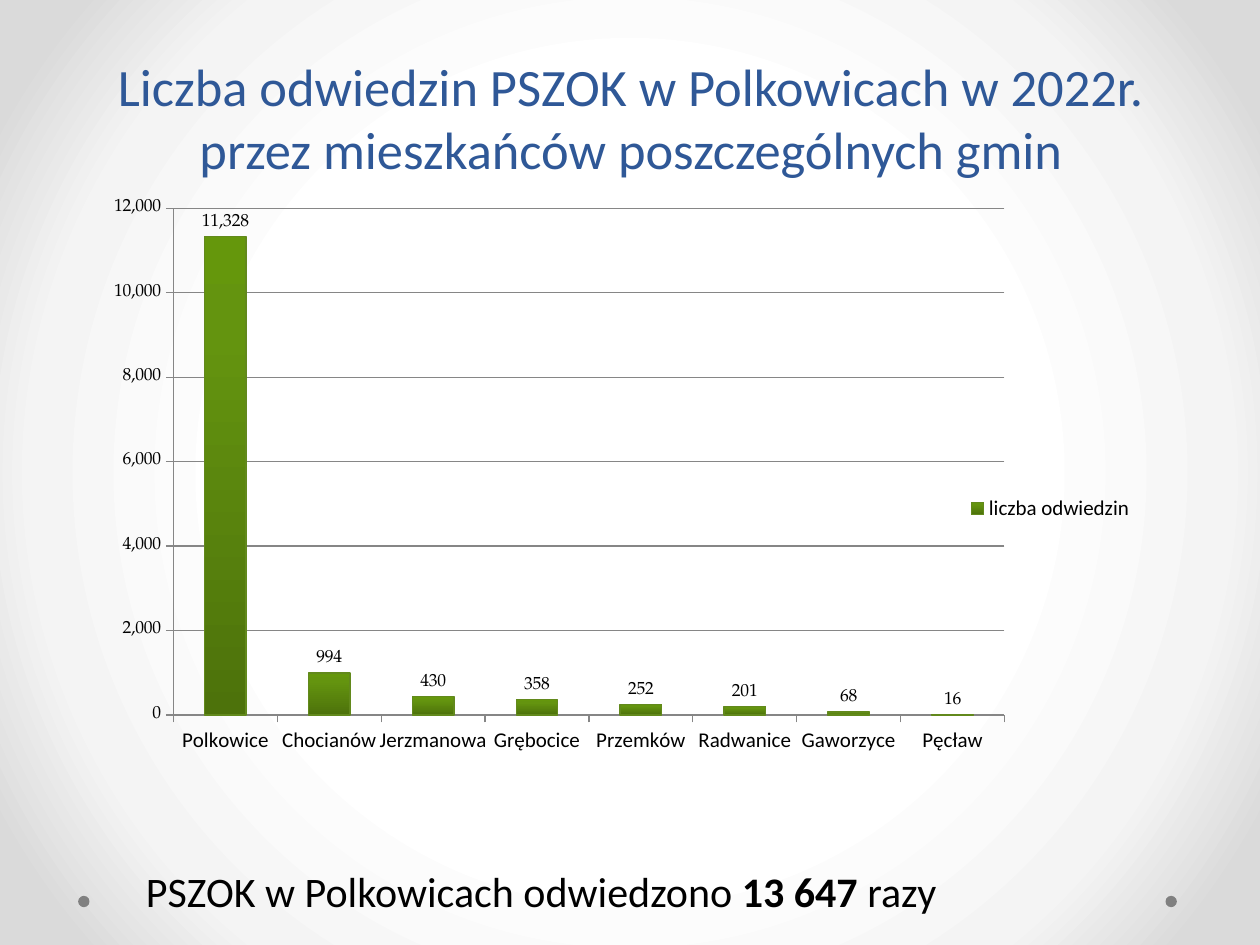
from lxml import etree
from pptx import Presentation
from pptx.chart.data import CategoryChartData
from pptx.dml.color import RGBColor
from pptx.enum import chart as ch, shapes, text
from pptx.oxml import parse_xml
from pptx.oxml.ns import nsdecls, qn
from pptx.util import Inches, Pt

BLUE = RGBColor(0x2F, 0x58, 0x97)
BLACK = RGBColor(0, 0, 0)
GRAY = RGBColor(0x80, 0x80, 0x80)
RULE = RGBColor(0x86, 0x86, 0x86)
EDGE = RGBColor(0x62, 0x89, 0x1C)
GLOW = [(50, RGBColor(0xFF, 0xFF, 0xFF)), (76, RGBColor(0xF4, 0xF4, 0xF4)),
        (92, RGBColor(0xDA, 0xDA, 0xDA))]
GREEN = [(0, RGBColor(0x4D, 0x72, 0x0B)), (80, RGBColor(0x64, 0x94, 0x0F)),
         (100, RGBColor(0x65, 0x97, 0x0C))]
ROUND = ('<a:path path="circle"><a:fillToRect l="50000" t="50000" '
         'r="50000" b="50000"/></a:path>')
RISE = '<a:lin ang="16200000" scaled="0"/>'

TITLE = ["Liczba odwiedzin PSZOK w Polkowicach w 2022r.\v"
         "przez mieszkańców poszczególnych gmin"]
TOTAL = ["PSZOK w Polkowicach odwiedzono ", "13 647 ", "razy"]
SERIES = "liczba odwiedzin"
VISITS = {"Polkowice": 11328, "Chocianów": 994, "Jerzmanowa": 430,
          "Grębocice": 358, "Przemków": 252, "Radwanice": 201,
          "Gaworzyce": 68, "Pęcław": 16}
PLOT = {"x": 0.075, "y": 0.034, "w": 0.79, "h": 0.787}
DOTS = [0.62, 9.25]
LABEL = {"name": "Calibri", "size": Pt(12)}


def style(item, **vals):
    for key, val in vals.items():
        setattr(item, key, val)


def shade(fill, root, stops, tail):
    fill.gradient()
    old = next(root.iter(qn("a:gradFill")))
    marks = "".join(f'<a:gs pos="{pos * 1000}"><a:srgbClr val="{tint}"/></a:gs>'
                    for pos, tint in stops)
    new = parse_xml(f'<a:gradFill {nsdecls("a")} rotWithShape="1">'
                    f'<a:gsLst>{marks}</a:gsLst>{tail}</a:gradFill>')
    old.getparent().replace(old, new)


def write(slide, box, parts, size, tint, align, anchor):
    frame = slide.shapes.add_textbox(*map(Inches, box)).text_frame
    style(frame, word_wrap=True, vertical_anchor=anchor)
    para = frame.paragraphs[0]
    para.alignment = align
    for part in parts:
        start = len(para.runs)
        for i, line in enumerate(part.split("\v")):
            if i:
                para.add_line_break()
            para.add_run().text = line
        for run in para.runs[start:]:
            style(run.font, name="Calibri", size=Pt(size),
                  bold=part == "13 647 ")
            run.font.color.rgb = tint


def place(area):
    for old in area.findall(qn("c:layout")):
        area.remove(old)
    layout = etree.Element(qn("c:layout"))
    inner = etree.SubElement(layout, qn("c:manualLayout"))
    rows = [("layoutTarget", "inner"), ("xMode", "edge"), ("yMode", "edge")]
    for key, val in rows + list(PLOT.items()):
        etree.SubElement(inner, qn(f"c:{key}")).set("val", str(val))
    area.insert(0, layout)


def draw(slide):
    data = CategoryChartData(number_format="#,##0")
    data.categories = list(VISITS)
    data.add_series(SERIES, list(VISITS.values()))
    box = map(Inches, (0.75, 1.48, 8.35, 5.11))
    chart = slide.shapes.add_chart(ch.XL_CHART_TYPE.COLUMN_CLUSTERED,
                                   *box, data).chart
    style(chart, has_title=False, has_legend=True)
    style(chart.font, name="TeX Gyre Pagella", size=Pt(10))
    chart.font.color.rgb = BLACK
    style(chart.legend, position=ch.XL_LEGEND_POSITION.RIGHT,
          include_in_layout=False)
    cats, vals = chart.category_axis, chart.value_axis
    for font in (chart.legend.font, cats.tick_labels.font):
        style(font, **LABEL)
    style(vals, minimum_scale=0, maximum_scale=12000, major_unit=2000,
          has_major_gridlines=True)
    style(vals.tick_labels, number_format="#,##0",
          number_format_is_linked=False)
    for axis in (cats, vals):
        axis.major_tick_mark = ch.XL_TICK_MARK.OUTSIDE
    for part in (cats, vals, vals.major_gridlines):
        part.format.line.color.rgb = RULE
        part.format.line.width = Pt(0.75)
    plot = chart.plots[0]
    style(plot, gap_width=150, vary_by_categories=False, has_data_labels=True)
    style(plot.data_labels, show_value=True, number_format="#,##0",
          number_format_is_linked=False,
          position=ch.XL_LABEL_POSITION.OUTSIDE_END)
    bars = plot.series[0]
    bars.invert_if_negative = False
    shade(bars.format.fill, bars._element, GREEN, RISE)
    bars.format.line.color.rgb = EDGE
    bars.format.line.width = Pt(0.75)
    place(next(chart._chartSpace.iter(qn("c:plotArea"))))


def main():
    deck = Presentation()
    style(deck, slide_width=Inches(10), slide_height=Inches(7.5))
    slide = deck.slides.add_slide(deck.slide_layouts[6])
    shade(slide.background.fill, slide.element, GLOW, ROUND)
    for left in DOTS:
        dot = slide.shapes.add_shape(shapes.MSO_SHAPE.OVAL, Inches(left),
                                     Inches(7.11), Inches(0.09), Inches(0.09))
        dot.shadow.inherit = False
        dot.fill.solid()
        dot.fill.fore_color.rgb = GRAY
        dot.line.fill.background()
    write(slide, (0.51, 0.01, 9, 1.47), TITLE, 30, BLUE,
          text.PP_ALIGN.CENTER, text.MSO_ANCHOR.BOTTOM)
    draw(slide)
    write(slide, (1.06, 6.82, 6.52, 0.5), TOTAL, 24, BLACK,
          text.PP_ALIGN.LEFT, text.MSO_ANCHOR.TOP)
    deck.save("out.pptx")


if __name__ == "__main__":
    main()
